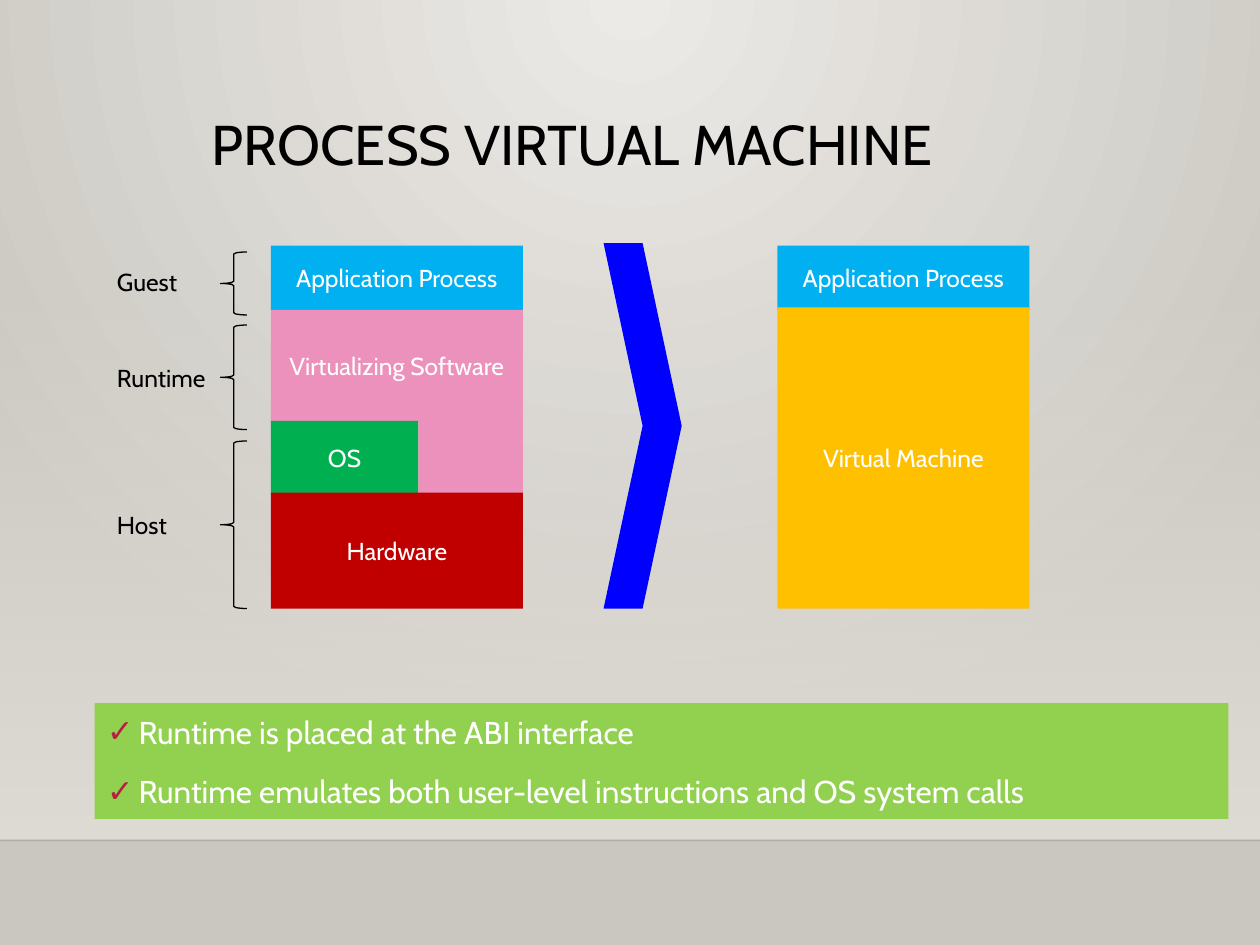
import lxml.etree
import pptx
import pptx.dml.color
import pptx.enum.shapes
import pptx.enum.text
import pptx.oxml
import pptx.oxml.ns
import pptx.util

Inches = pptx.util.Inches
SHAPE = pptx.enum.shapes.MSO_SHAPE
ANCHOR = pptx.enum.text.MSO_ANCHOR
ALIGN = pptx.enum.text.PP_ALIGN
qn = pptx.oxml.ns.qn
FONT = "Cabin"
COLORS = {
    "ink": "000000", "white": "FFFFFF", "glow": "ECEAE7", "stone": "CAC7C1",
    "panel": "DFDBD5", "rule": "000001", "guest": "00B0F0", "runtime": "EB91BB",
    "os": "00B050", "hardware": "C00000", "machine": "FFC000",
    "chevron": "0000FF", "notes": "92D050", "check": "B71E42",
}


def rgb(name):
    """Return the named colour."""
    return pptx.dml.color.RGBColor.from_string(COLORS[name])


def place(shape, left, top, width, height):
    """Move and size a shape, in inches."""
    shape.left, shape.top = Inches(left), Inches(top)
    shape.width, shape.height = Inches(width), Inches(height)


def style_text(frame, size, color, align):
    """Format every paragraph and run of a text frame."""
    for paragraph in frame.paragraphs:
        paragraph.alignment = align
        for run in paragraph.runs:
            run.font.name, run.font.size = FONT, pptx.util.Pt(size)
            run.font.color.rgb = rgb(color)


def add_block(slide, kind, box, fill, text=""):
    """Add a filled shape without outline, with optional centred text."""
    block = slide.shapes.add_shape(kind, *map(Inches, box))
    block.shadow.inherit = False
    block.fill.solid()
    block.fill.fore_color.rgb = rgb(fill)
    block.line.fill.background()
    if text:
        block.text_frame.text = text
        block.text_frame.word_wrap = True
        block.text_frame.vertical_anchor = ANCHOR.MIDDLE
        style_text(block.text_frame, 14, "white", ALIGN.CENTER)
    return block


def set_gradient(properties, start, end, start_alpha, direction):
    """Replace the solid fill of a properties element with a gradient."""
    gradient = pptx.oxml.parse_xml(
        f'<a:gradFill {pptx.oxml.ns.nsdecls("a")} rotWithShape="1"><a:gsLst>'
        f'<a:gs pos="0"><a:srgbClr val="{COLORS[start]}"><a:alpha val="{start_alpha}"/></a:srgbClr></a:gs>'
        f'<a:gs pos="100000"><a:srgbClr val="{COLORS[end]}"/></a:gs>'
        f'</a:gsLst>{direction}</a:gradFill>')
    properties.replace(properties.find(qn("a:solidFill")), gradient)


def draw_backdrop(slide, left, top, width, height):
    """Draw the glowing background, the faded panel and the floor line."""
    slide.background.fill.solid()
    set_gradient(slide.element.find(".//" + qn("p:bgPr")), "glow", "stone", 100000,
                 '<a:path path="circle"><a:fillToRect l="43000" r="43000" b="100000"/></a:path>')
    panel = add_block(slide, SHAPE.RECTANGLE, (left, top, width, height), "panel")
    set_gradient(panel.element.spPr, "panel", "panel", 0, '<a:lin ang="5400000" scaled="0"/>')
    floor = Inches(top + height)
    rule = slide.shapes.add_connector(pptx.enum.shapes.MSO_CONNECTOR.STRAIGHT,
                                      Inches(left), floor, Inches(left + width), floor)
    rule.line.color.rgb = rgb("rule")
    rule.line.width = pptx.util.Pt(1)
    tint = rule.element.spPr.find(".//" + qn("a:srgbClr"))
    lxml.etree.SubElement(tint, qn("a:alpha"), val="20000")
    lxml.etree.SubElement(rule.element.spPr, qn("a:effectLst"))
    tree = panel.element.getparent()
    for position, part in enumerate((panel, rule), start=2):
        tree.insert(position, part.element)


def fill_title(title, box):
    """Place and format the slide title."""
    place(title, *box)
    frame = title.text_frame
    frame.text = "PROCESS VIRTUAL MACHINE"
    frame.vertical_anchor = ANCHOR.TOP
    frame.auto_size = pptx.enum.text.MSO_AUTO_SIZE.NONE
    frame.paragraphs[0].line_spacing = 0.9
    style_text(frame, 32, "ink", ALIGN.LEFT)


def fill_notes(notes, box):
    """Place the checklist and give it tick bullets."""
    place(notes, *box)
    notes.fill.solid()
    notes.fill.fore_color.rgb = rgb("notes")
    frame = notes.text_frame
    frame.text = ("Runtime is placed at the ABI interface\n"
                  "Runtime emulates both user-level instructions and OS system calls")
    frame.vertical_anchor = ANCHOR.TOP
    frame.auto_size = pptx.enum.text.MSO_AUTO_SIZE.NONE
    for index, paragraph in enumerate(frame.paragraphs):
        paragraph.line_spacing = 1.1
        paragraph.space_before = pptx.util.Pt(10 if index else 0)
        properties = paragraph._p.get_or_add_pPr()
        properties.set("marL", str(Inches(0.25)))
        properties.set("indent", str(Inches(-0.25)))
        tint = lxml.etree.SubElement(properties, qn("a:buClr"))
        lxml.etree.SubElement(tint, qn("a:srgbClr"), val=COLORS["check"])
        lxml.etree.SubElement(properties, qn("a:buChar"), char="✓")
    style_text(frame, 18, "white", ALIGN.JUSTIFY)


def draw_roles(slide, left, top):
    """Draw the role names with their braces."""
    roles = [("Guest", 0, 0.5, 0.07, 0.72), ("Runtime", 0.58, 0.83, 0.83, 0.93),
             ("Host", 1.5, 1.33, 2, 0.61)]
    for name, offset, height, name_offset, name_width in roles:
        brace = slide.shapes.add_shape(SHAPE.LEFT_BRACE, Inches(left + 0.92), Inches(top + offset),
                                       Inches(0.21), Inches(height))
        brace.shadow.inherit = False
        brace.fill.background()
        brace.line.color.rgb = rgb("ink")
        brace.line.width = pptx.util.Pt(0.75)
        label = slide.shapes.add_textbox(Inches(left), Inches(top + name_offset),
                                         Inches(name_width), Inches(0.34))
        label.text_frame.text = name
        label.text_frame.word_wrap = False
        style_text(label.text_frame, 14, "ink", ALIGN.LEFT)


def draw_stack(slide, left, top, layers):
    """Draw layers given as text, colour, offsets, width and height."""
    for text, fill, across, down, width, height in layers:
        add_block(slide, SHAPE.RECTANGLE, (left + across, top + down, width, height), fill, text)


def main():
    """Build and save the slide."""
    deck = pptx.Presentation()
    deck.slide_width, deck.slide_height = Inches(10), Inches(7.5)
    slide = deck.slides.add_slide(deck.slide_layouts[1])
    draw_backdrop(slide, 0, 2.2, 10, 4.47)
    fill_title(slide.shapes.title, (1.58, 0.88, 7.19, 1.15))
    fill_notes(slide.placeholders[1], (0.75, 5.58, 9, 0.92))
    draw_roles(slide, 0.83, 2)
    draw_stack(slide, 2.15, 1.95, [
        ("Application Process", "guest", 0, 0, 2, 0.51),
        ("Virtualizing Software", "runtime", 0, 0.51, 2, 0.89),
        ("", "runtime", 1.17, 1.4, 0.83, 0.58),
        ("OS", "os", 0, 1.39, 1.17, 0.58),
        ("Hardware", "hardware", 0, 1.96, 2, 0.92),
    ])
    draw_stack(slide, 6.17, 1.95, [
        ("Application Process", "guest", 0, 0, 2, 0.51),
        ("Virtual Machine", "machine", 0, 0.49, 2, 2.39),
    ])
    add_block(slide, SHAPE.CHEVRON, (4.79, 1.93, 0.62, 2.9), "chevron")
    deck.save("out.pptx")


if __name__ == "__main__":
    main()
